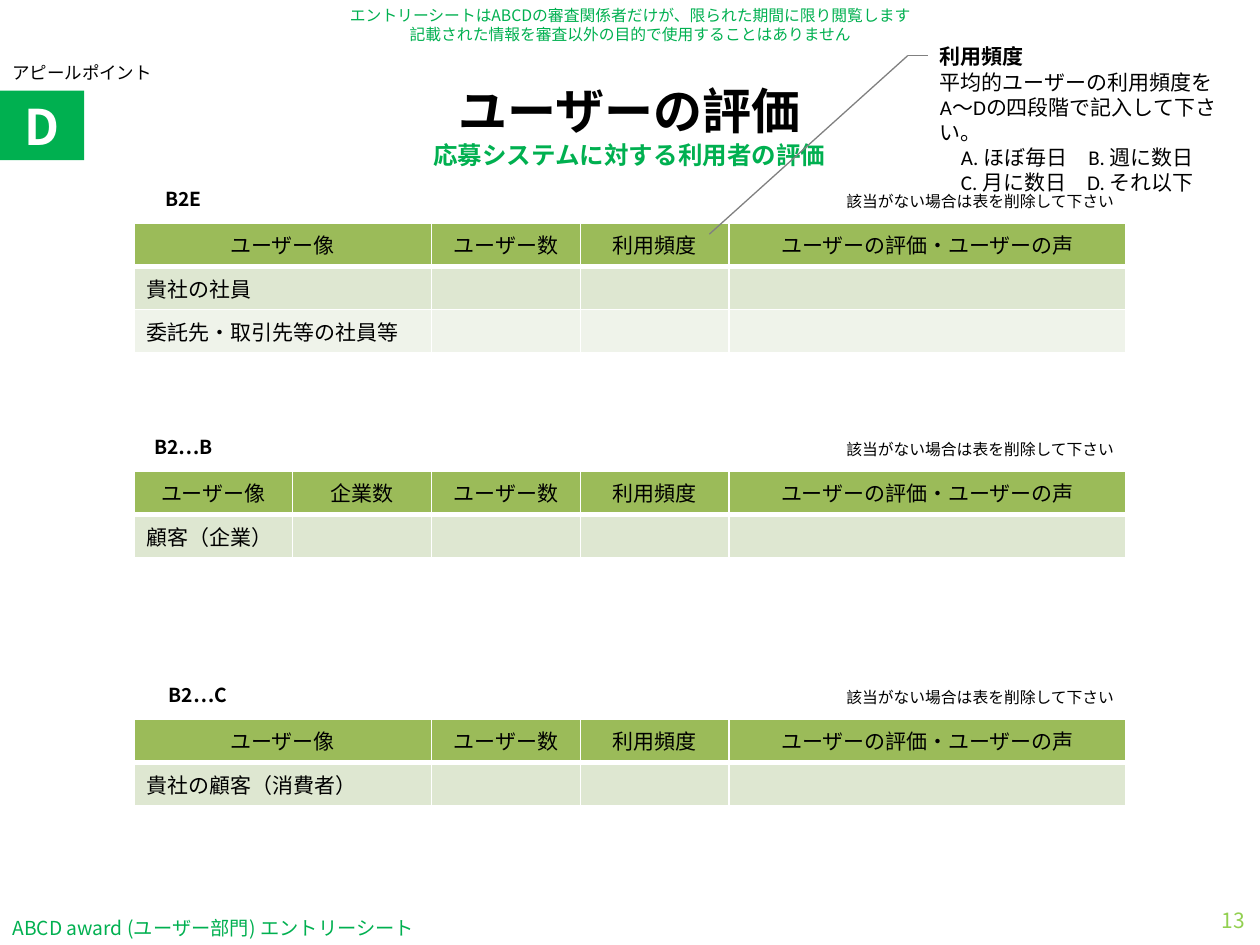
from dataclasses import dataclass

from lxml.etree import SubElement
from pptx import Presentation
from pptx.dml.color import RGBColor as Rgb
from pptx.enum.shapes import MSO_CONNECTOR as Connector, MSO_SHAPE as Preset
from pptx.enum.text import MSO_ANCHOR as Anchor, MSO_AUTO_SIZE as Fit, PP_ALIGN as Align
from pptx.oxml.ns import qn
from pptx.util import Cm, Pt


@dataclass(frozen=True)
class Theme:
    font: str = "Noto Sans CJK JP"
    latin: str = "Calibri"
    black: str = "000000"
    white: str = "FFFFFF"
    green: str = "00B050"
    lime: str = "92D050"
    gray: str = "808080"
    header: str = "9BBB59"
    bands: tuple = ("DEE7D1", "EFF3EA")
    display: int = 28
    subtitle: int = 14
    body: int = 12
    label: int = 11
    caption: int = 10
    note: int = 9


theme = Theme()


def write(para, text, *, size=theme.body, color=theme.black, bold=False,
          align=Align.LEFT, latin=theme.font):
    para.alignment = align
    for index, line in enumerate(text.split("\n")):
        if index:
            para.add_line_break()
        if not line:
            continue
        span = para.add_run()
        span.text = line
        span.font.size = Pt(size)
        span.font.bold = bold
        span.font.name = latin
        span.font.color.rgb = Rgb.from_string(color)
        SubElement(span.font._element, qn("a:ea")).set("typeface", theme.font)


def add_box(left, top, width, height, anchor=Anchor.MIDDLE):
    box = page.shapes.add_textbox(Cm(left), Cm(top), Cm(width), Cm(height))
    box.text_frame.word_wrap = True
    box.text_frame.vertical_anchor = anchor
    return box.text_frame


deck = Presentation()
deck.slide_width, deck.slide_height = Cm(25.4), Cm(19.05)
page = deck.slides.add_slide(deck.slide_layouts[5])

footer = add_box(0, 18.36, 10, 0.69)
write(footer.paragraphs[0], "ABCD award (ユーザー部門) エントリーシート",
      size=theme.label, color=theme.green)
notice = add_box(5.7, 0, 14, 1, Anchor.TOP)
write(notice.paragraphs[0],
      "エントリーシートはABCDの審査関係者だけが、限られた期間に限り閲覧します\n"
      "記載された情報を審査以外の目的で使用することはありません",
      size=theme.note, color=theme.green, align=Align.CENTER)

title = page.shapes.title
title.left, title.top, title.width, title.height = Cm(0.69), Cm(1.52), Cm(24), Cm(2)
title.text_frame.auto_size = Fit.NONE
title.text_frame.vertical_anchor = Anchor.MIDDLE
heading = title.text_frame.paragraphs[0]
write(heading, "ユーザーの評価\n", size=theme.display, bold=True, align=Align.CENTER)
write(heading, "応募システムに対する利用者の評価", size=theme.subtitle,
      color=theme.green, bold=True, align=Align.CENTER)

number = add_box(23.5, 18.03, 1.85, 1.02)
write(number.paragraphs[0], "13", color=theme.lime, align=Align.RIGHT)

badge = page.shapes.add_shape(Preset.RECTANGLE, 0, Cm(1.83), Cm(1.7), Cm(1.4))
badge.shadow.inherit = False
badge.fill.solid()
badge.fill.fore_color.rgb = Rgb.from_string(theme.green)
badge.line.fill.background()
badge.text_frame.vertical_anchor = Anchor.MIDDLE
write(badge.text_frame.paragraphs[0], "D", size=theme.display, color=theme.white,
      bold=True, align=Align.CENTER)
appeal = add_box(0, 1.12, 4, 0.53, Anchor.TOP)
write(appeal.paragraphs[0], "アピールポイント", size=theme.caption)

table_left, table_width, row_height = 2.7, 20, 0.87
first_top, section_step = 4.5, 5
usual_columns = {"ユーザー像": 6, "ユーザー数": 3, "利用頻度": 3,
                 "ユーザーの評価・ユーザーの声": 8}
company_columns = {"ユーザー像": 3.2, "企業数": 2.8, "ユーザー数": 3, "利用頻度": 3,
                   "ユーザーの評価・ユーザーの声": 8}
sections = [
    ("B2E", 2, Align.CENTER, usual_columns, ["貴社の社員", "委託先・取引先等の社員等"]),
    ("B2…B", 2, Align.CENTER, company_columns, ["顧客（企業）"]),
    ("B2…C", 2.13, Align.RIGHT, usual_columns, ["貴社の顧客（消費者）"]),
]
for order, (name, name_width, name_align, columns, users) in enumerate(sections):
    top = first_top + order * section_step
    row_count = len(users) + 1
    grid = page.shapes.add_table(row_count, len(columns), Cm(table_left), Cm(top),
                                 Cm(table_width), Cm(row_height * row_count)).table
    for column, share in zip(grid.columns, columns.values()):
        column.width = Cm(share)
    for row, fill in zip(grid.rows, (theme.header, *theme.bands)):
        row.height = Cm(row_height)
        for cell in row.cells:
            cell.fill.solid()
            cell.fill.fore_color.rgb = Rgb.from_string(fill)
            cell.text_frame.paragraphs[0].font.size = Pt(theme.body)
    for cell, text in zip(grid.rows[0].cells, columns):
        write(cell.text_frame.paragraphs[0], text, align=Align.CENTER)
        properties = cell._tc.get_or_add_tcPr()
        border = SubElement(properties, qn("a:lnB"), w=str(Pt(3)))
        paint = SubElement(border, qn("a:solidFill"))
        SubElement(paint, qn("a:srgbClr"), val=theme.white)
        properties.insert(0, border)
    for position, user in enumerate(users, 1):
        write(grid.cell(position, 0).text_frame.paragraphs[0], user)

    label = add_box(table_left, top - 1, name_width, 1)
    write(label.paragraphs[0], name, size=theme.label, bold=True, align=name_align)
    remark = add_box(table_left + table_width - 7, top - 0.95, 7, 1)
    write(remark.paragraphs[0], "該当がない場合は表を削除して下さい",
          size=theme.note, align=Align.RIGHT)

callout = add_box(18.7, 0.76, 6.4, 2.82, Anchor.TOP)
write(callout.paragraphs[0], "利用頻度\n", bold=True, latin=theme.latin)
write(callout.paragraphs[0], "平均的ユーザーの利用頻度を", latin=theme.latin)
for text in ("A～Dの四段階で記入して下さい。",
             "　A. ほぼ毎日　B. 週に数日",
             "　C. 月に数日　D. それ以下"):
    write(callout.add_paragraph(), text, latin=theme.latin)

leader = [(14.3, 4.72), (18.3, 1.12), (18.7, 1.12)]
for start, end in zip(leader, leader[1:]):
    line = page.shapes.add_connector(Connector.STRAIGHT, *map(Cm, start + end))
    line.line.color.rgb = Rgb.from_string(theme.gray)
    line.line.width = Pt(0.75)
    SubElement(line._element.spPr, qn("a:effectLst"))

deck.save("out.pptx")
